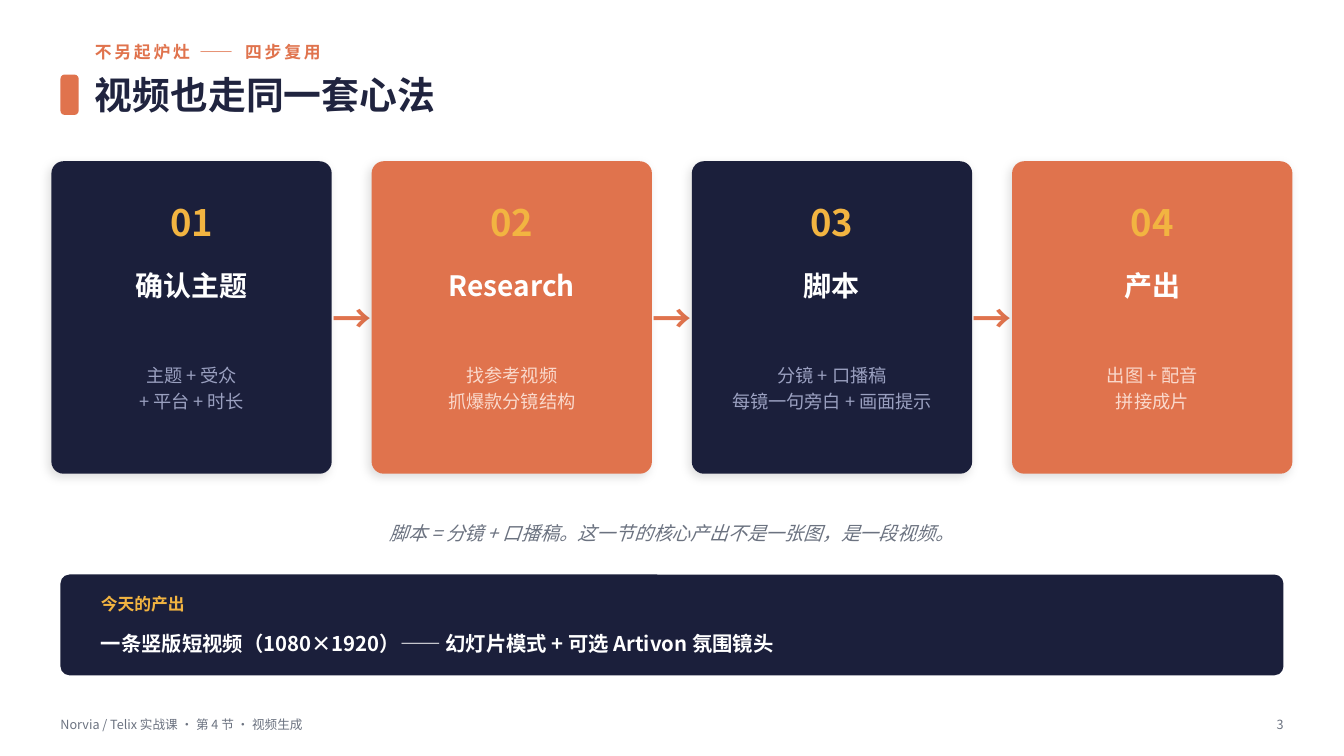
"""Builds the four-step video workflow slide."""
from lxml.etree import SubElement
from pptx import Presentation
from pptx.dml.color import RGBColor
from pptx.enum.shapes import MSO_SHAPE
from pptx.enum.text import MSO_ANCHOR, PP_ALIGN
from pptx.oxml.ns import qn
from pptx.util import Inches, Pt

FONT = "Noto Sans CJK SC"
NAVY = RGBColor(0x1B, 0x1F, 0x3B)
INK = RGBColor(0x20, 0x24, 0x3F)
CORAL = RGBColor(0xE0, 0x73, 0x4D)
GOLD = RGBColor(0xF2, 0xB4, 0x41)
WHITE = RGBColor(0xFF, 0xFF, 0xFF)
GRAY = RGBColor(0x6B, 0x72, 0x80)
MIST = RGBColor(0x9A, 0xA0, 0xC0)
PEACH = RGBColor(0xFA, 0xD9, 0xCC)

STEPS = [
    ("确认主题", "主题 + 受众\n+ 平台 + 时长"),
    ("Research", "找参考视频\n抓爆款分镜结构"),
    ("脚本", "分镜 + 口播稿\n每镜一句旁白 + 画面提示"),
    ("产出", "出图 + 配音\n拼接成片"),
]
LEFT, TOP, WIDTH, HEIGHT, PITCH = 0.51, 1.6, 2.78, 3.1, 3.176


def fill_text(shape, text, size, color, bold=False, italic=False,
              align=PP_ALIGN.LEFT, line=None, spacing=0):
    frame = shape.text_frame
    frame.word_wrap = True
    frame.vertical_anchor = MSO_ANCHOR.MIDDLE
    frame.margin_left = frame.margin_right = 0
    frame.margin_top = frame.margin_bottom = 0
    frame.text = text
    for para in frame.paragraphs:
        para.alignment = align
        if line:
            para.line_spacing = line
        font = para.font
        font.name, font.size = FONT, Pt(size)
        font.bold, font.italic = bold, italic
        font.color.rgb = color
        props = para._p.pPr.find(qn("a:defRPr"))
        SubElement(props, qn("a:ea"), typeface=FONT)
        if spacing:
            props.set("spc", str(spacing * 100))


def add_text(slide, box, text, size, color, **style):
    shape = slide.shapes.add_textbox(*map(Inches, box))
    fill_text(shape, text, size, color, **style)


def add_title(slide, box, text):
    title = slide.shapes.title
    title.left, title.top, title.width, title.height = map(Inches, box)
    fill_text(title, text, 27, INK, bold=True)


def add_panel(slide, box, color, radius):
    panel = slide.shapes.add_shape(MSO_SHAPE.ROUNDED_RECTANGLE, *map(Inches, box))
    panel.adjustments[0] = radius / min(box[2:])
    panel.shadow.inherit = False
    panel.fill.solid()
    panel.fill.fore_color.rgb = color
    panel.line.fill.background()
    return panel


def add_shadow(shape):
    effects = shape._element.spPr.find(qn("a:effectLst"))
    outer = SubElement(effects, qn("a:outerShdw"), blurRad=str(Pt(7)),
                       dist=str(Pt(3)), dir=str(135 * 60000),
                       algn="bl", rotWithShape="0")
    black = SubElement(outer, qn("a:srgbClr"), val="000000")
    SubElement(black, qn("a:alpha"), val="12000")


def add_step(slide, index, name, detail):
    left = LEFT + index * PITCH
    fill, tint = [(NAVY, MIST), (CORAL, PEACH)][index % 2]
    mid = PP_ALIGN.CENTER
    add_shadow(add_panel(slide, (left, TOP, WIDTH, HEIGHT), fill, 0.12))
    add_text(slide, (left + 0.1, 1.88, 2.58, 0.65), f"{index + 1:02}", 26, GOLD,
             bold=True, align=mid)
    add_text(slide, (left + 0.1, 2.58, 2.58, 0.5), name, 20, WHITE,
             bold=True, align=mid)
    add_text(slide, (left + 0.15, 3.18, 2.48, 1.3), detail, 13, tint,
             align=mid, line=1.2)
    if index < len(STEPS) - 1:
        add_text(slide, (left + 2.76, TOP, 0.44, HEIGHT), "→", 28, CORAL,
                 bold=True, align=mid)


def main():
    deck = Presentation()
    deck.slide_width, deck.slide_height = Inches(13.33), Inches(7.5)
    slide = deck.slides.add_slide(deck.slide_layouts[5])

    add_text(slide, (0.94, 0.36, 11.79, 0.3), "不另起炉灶 —— 四步复用", 12, CORAL,
             bold=True, spacing=2)
    add_panel(slide, (0.6, 0.74, 0.18, 0.4), CORAL, 0.04)
    add_title(slide, (0.94, 0.64, 11.79, 0.6), "视频也走同一套心法")

    for index, (name, detail) in enumerate(STEPS):
        add_step(slide, index, name, detail)

    add_text(slide, (0.6, 5.1, 12.13, 0.38),
             "脚本 = 分镜 + 口播稿。这一节的核心产出不是一张图，是一段视频。",
             13.5, GRAY, italic=True, align=PP_ALIGN.CENTER)
    add_panel(slide, (0.6, 5.7, 12.13, 1), NAVY, 0.09)
    add_text(slide, (1, 5.84, 2.5, 0.3), "今天的产出", 12, GOLD, bold=True)
    add_text(slide, (1, 6.18, 11.33, 0.4),
             "一条竖版短视频（1080×1920）—— 幻灯片模式 + 可选 Artivon 氛围镜头",
             14.5, WHITE, bold=True)

    add_text(slide, (0.6, 7.04, 9, 0.3),
             "Norvia / Telix 实战课 · 第 4 节 · 视频生成", 9, GRAY)
    add_text(slide, (12.03, 7.04, 0.7, 0.3), "3", 9, GRAY, align=PP_ALIGN.RIGHT)
    deck.save("out.pptx")


if __name__ == "__main__":
    main()
